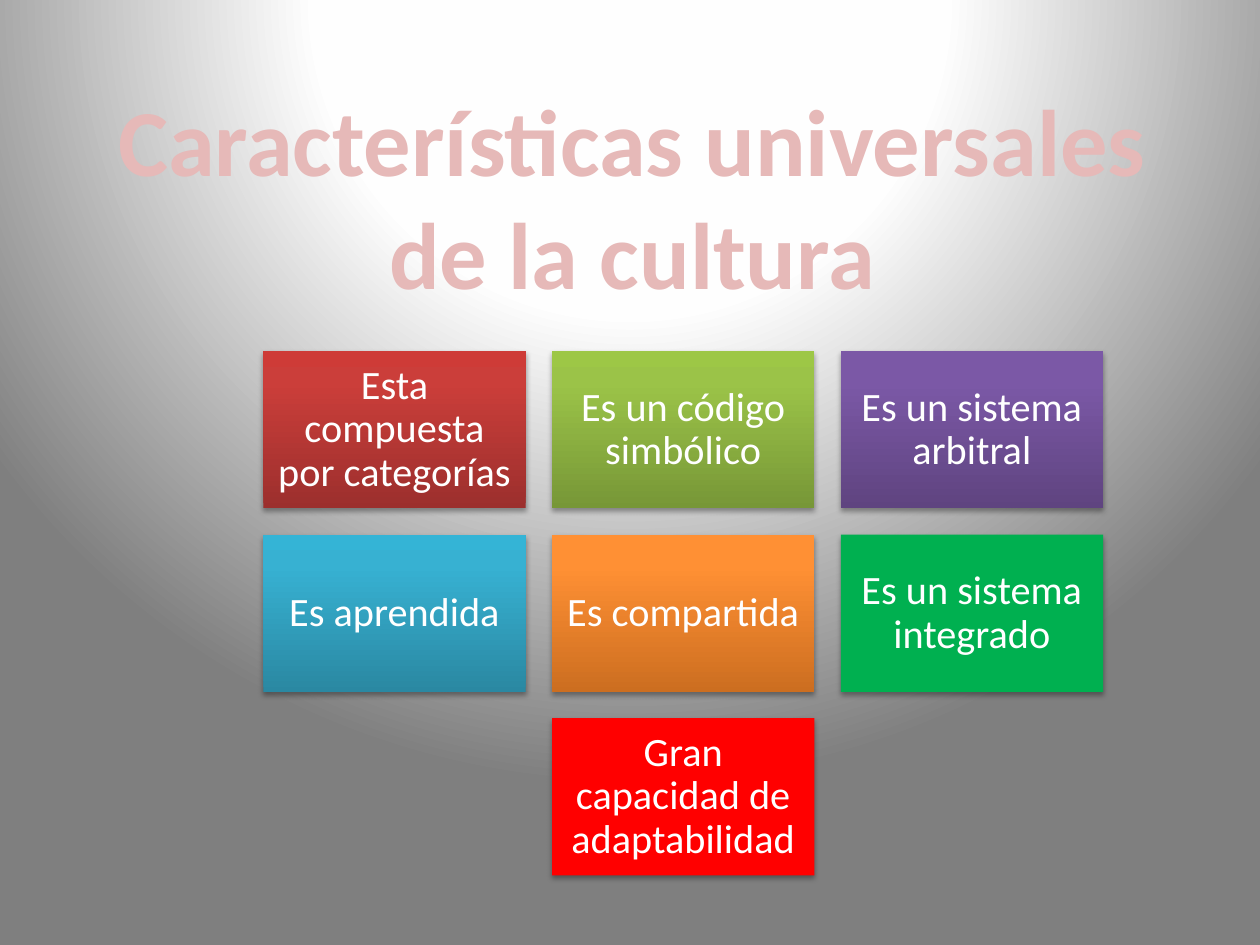
from lxml.etree import SubElement
from pptx import Presentation
from pptx.dml.color import RGBColor
from pptx.enum.shapes import MSO_SHAPE
from pptx.enum.text import MSO_ANCHOR, PP_ALIGN
from pptx.oxml import parse_xml
from pptx.oxml.ns import nsdecls, qn
from pptx.util import Cm, Pt

COLORS = {
    "title": "E6B9B8",
    "title_outline": "C0504D",
    "text": "FFFFFF",
    "shadow": "000000",
}
BACKGROUND_STOPS = [(0, "FFFFFF"), (40, "FEFEFE"), (100, "7F7F7F")]

# Text and fill colours of each box: dark to light, or a single plain colour.
TRAIT_ROWS = [
    [
        ("Esta compuesta por categorías", ["9C2F2D", "CB3E3A", "CE3B37"]),
        ("Es un código simbólico", ["779737", "9BC348", "9DC746"]),
        ("Es un sistema arbitral", ["5F4480", "7B58A6", "7C57A8"]),
    ],
    [
        ("Es aprendida", ["2A88A2", "37B1D2", "34B4D6"]),
        ("Es compartida", ["CC6E20", "FF9034", "FF9136"]),
        ("Es un sistema integrado", ["00B050"]),
    ],
    [("Gran capacidad de adaptabilidad", ["FF0000"])],
]
BOX_STOPS = (0, 80, 100)
COLUMNS = 3
GRID_LEFT, GRID_TOP = 5.31, 7.08
BOX_WIDTH, BOX_HEIGHT, GAP = 5.29, 3.17, 0.53

TITLE_FONT = {"name": "Calibri", "size": Pt(54), "bold": True}
BOX_FONT = {"name": "Calibri", "size": Pt(23), "bold": False}
BOX_FRAME = {
    "word_wrap": True,
    "vertical_anchor": MSO_ANCHOR.MIDDLE,
    "margin_left": Cm(0.25),
    "margin_right": Cm(0.25),
    "margin_top": Cm(0.25),
    "margin_bottom": Cm(0.25),
}


def set_attributes(target, values):
    for name, value in values.items():
        setattr(target, name, value)


def gradient_xml(stops, direction):
    stop_list = "".join(
        f'<a:gs pos="{position * 1000}"><a:srgbClr val="{color}"/></a:gs>'
        for position, color in stops
    )
    return (
        f'<a:gradFill {nsdecls("a")} rotWithShape="1">'
        f"<a:gsLst>{stop_list}</a:gsLst>{direction}</a:gradFill>"
    )


def set_background(slide):
    direction = (
        '<a:path path="circle">'
        '<a:fillToRect l="50000" t="-80000" r="50000" b="180000"/></a:path>'
    )
    gradient = gradient_xml(BACKGROUND_STOPS, direction)
    background = parse_xml(
        f'<p:bg {nsdecls("p", "a")}><p:bgPr>{gradient}<a:effectLst/></p:bgPr></p:bg>'
    )
    slide.element.cSld.insert(0, background)


def write_text(text_frame, text, font_format, color):
    paragraph = text_frame.paragraphs[0]
    paragraph.alignment = PP_ALIGN.CENTER
    run = paragraph.add_run()
    run.text = text
    set_attributes(run.font, font_format)
    run.font.color.rgb = RGBColor.from_string(color)
    return paragraph, run


def outline_text(run, color, width):
    outline = parse_xml(
        f'<a:ln {nsdecls("a")} w="{width}"><a:solidFill>'
        f'<a:srgbClr val="{color}"/></a:solidFill></a:ln>'
    )
    run.font._element.insert(0, outline)


def add_title(slide, text):
    title = slide.shapes.title
    set_attributes(title, {
        "left": Cm(1.3), "top": Cm(1.52), "width": Cm(22.89), "height": Cm(4.88),
    })
    set_attributes(title.text_frame, {
        "word_wrap": True, "vertical_anchor": MSO_ANCHOR.TOP,
    })
    run = write_text(title.text_frame, text, TITLE_FONT, COLORS["title"])[1]
    outline_text(run, COLORS["title_outline"], Pt(1.75))


def fill_box(shape, colors):
    """Fill plainly for one colour, else with a gradient from bottom to top."""
    shape.fill.solid()
    if len(colors) == 1:
        shape.fill.fore_color.rgb = RGBColor.from_string(colors[0])
        return
    gradient = gradient_xml(zip(BOX_STOPS, colors), '<a:lin ang="16200000" scaled="0"/>')
    properties = shape.element.spPr
    properties.replace(properties.find(qn("a:solidFill")), parse_xml(gradient))


def add_shadow(shape):
    shape.shadow.inherit = False
    effects = shape.element.spPr.find(qn("a:effectLst"))
    shadow = SubElement(effects, qn("a:outerShdw"), {
        "blurRad": str(Pt(3.1)), "dist": str(Pt(1.8)),
        "dir": "5400000", "rotWithShape": "0",
    })
    color = SubElement(shadow, qn("a:srgbClr"), val=COLORS["shadow"])
    SubElement(color, qn("a:alpha"), val="35000")


def add_trait_box(slide, left, top, text, colors):
    shape = slide.shapes.add_shape(
        MSO_SHAPE.RECTANGLE, Cm(left), Cm(top), Cm(BOX_WIDTH), Cm(BOX_HEIGHT)
    )
    fill_box(shape, colors)
    shape.line.fill.background()
    add_shadow(shape)
    set_attributes(shape.text_frame, BOX_FRAME)
    paragraph = write_text(shape.text_frame, text, BOX_FONT, COLORS["text"])[0]
    paragraph.line_spacing = 0.9


def add_trait_grid(slide):
    """Lay out the boxes in rows, with a short row centred."""
    for row, traits in enumerate(TRAIT_ROWS):
        top = GRID_TOP + row * (BOX_HEIGHT + GAP)
        first_column = (COLUMNS - len(traits)) / 2
        for index, (text, colors) in enumerate(traits):
            left = GRID_LEFT + (first_column + index) * (BOX_WIDTH + GAP)
            add_trait_box(slide, left, top, text, colors)


def main():
    presentation = Presentation()
    presentation.slide_width = Cm(25.4)
    presentation.slide_height = Cm(19.05)
    slide = presentation.slides.add_slide(presentation.slide_layouts[5])
    set_background(slide)
    add_title(slide, "Características universales de la cultura")
    add_trait_grid(slide)
    presentation.save("out.pptx")


if __name__ == "__main__":
    main()
